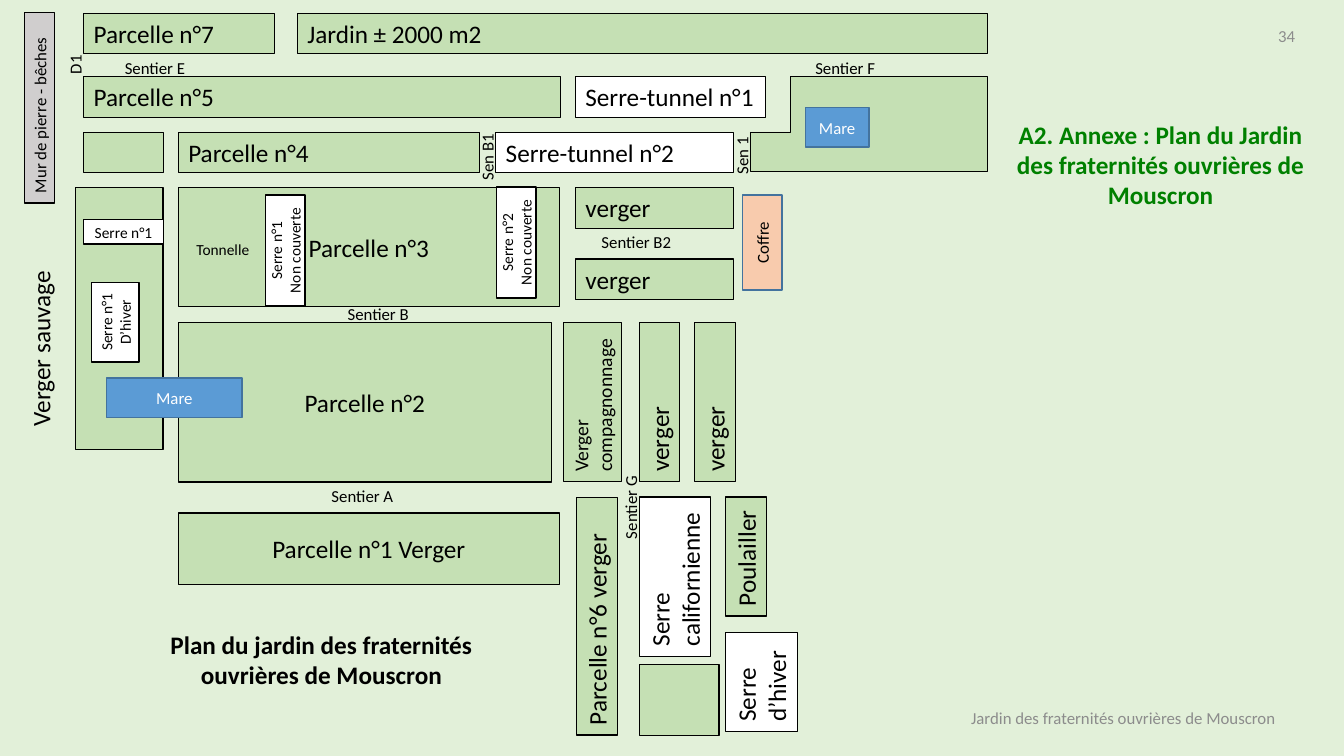
from dataclasses import dataclass

from pptx import Presentation
from pptx.dml.color import RGBColor
from pptx.enum.shapes import MSO_SHAPE as Preset
from pptx.enum.text import MSO_ANCHOR as Anchor, MSO_AUTO_SIZE as AutoSize, PP_ALIGN as Align
from pptx.util import Pt


@dataclass(frozen=True)
class Theme:
    font: str = "Calibri"
    ground: str = "E2F0D9"
    bed: str = "C5E0B4"
    glass: str = "FFFFFF"
    stone: str = "D0CECE"
    water: str = "5B9BD5"
    chest: str = "F8CBAD"
    edge: str = "43739E"
    ink: str = "000000"
    heading: str = "008000"
    muted: str = "8C8C8C"
    large: int = 18
    medium: int = 14
    small: int = 12
    tiny: int = 11


@dataclass(frozen=True)
class Box:
    left: float
    top: float
    width: float
    height: float

    def inner(self, x, y, width, height):
        """Return a box placed from this box's top left corner."""
        return Box(self.left + x, self.top + y, width, height)

    def turned(self):
        """Return the unrotated frame that fills this box after a quarter turn."""
        shift = (self.width - self.height) / 2
        return Box(self.left + shift, self.top - shift, self.height, self.width)

    def points(self):
        return [Pt(v) for v in (self.left, self.top, self.width, self.height)]


THEME = Theme()
ROW = 29
PATH = 21.6
POND = 28.1
TALL = 113.8


def rgb(value):
    return RGBColor.from_string(value)


def write(frame, text, *, size=THEME.large, color=THEME.ink, bold=False,
          align=Align.LEFT, anchor=Anchor.TOP, wrap=True):
    frame.word_wrap = wrap
    frame.auto_size = AutoSize.NONE
    frame.vertical_anchor = anchor
    for index, line in enumerate(text.split("\n")):
        para = frame.add_paragraph() if index else frame.paragraphs[0]
        para.alignment = align
        span = para.add_run()
        span.text = line
        span.font.name = THEME.font
        span.font.size = Pt(size)
        span.font.bold = bold
        span.font.color.rgb = rgb(color)


def paint(shape, fill, line, weight):
    shape.shadow.inherit = False
    shape.fill.solid()
    shape.fill.fore_color.rgb = rgb(fill)
    shape.line.color.rgb = rgb(line)
    shape.line.width = Pt(weight)


def plot(page, box, text="", *, fill=THEME.bed, line=THEME.ink, weight=0.75,
         upright=False, centred=False, **style):
    """Draw a filled rectangle; upright text reads from bottom to top."""
    frame = box.turned() if upright else box
    shape = page.shapes.add_shape(Preset.RECTANGLE, *frame.points())
    shape.rotation = 270 if upright else 0
    paint(shape, fill, line, weight)
    if centred:
        style.update(align=Align.CENTER, anchor=Anchor.MIDDLE)
    if text:
        write(shape.text_frame, text, **style)


def label(page, box, text, *, upright=False, size=THEME.small, **style):
    frame = box.turned() if upright else box
    shape = page.shapes.add_textbox(*frame.points())
    shape.rotation = 270 if upright else 0
    write(shape.text_frame, text, size=size, **style)


def pond(page, box):
    plot(page, box, "Mare", fill=THEME.water, line=THEME.edge, weight=1,
         centred=True, size=THEME.small, color=THEME.glass)


def pond_garden(page, box):
    """Draw the stepped bed with its pond."""
    right, bottom = box.left + box.width, box.top + box.height
    step_x, step_y = box.left + 28.8, box.top + 39.6
    corners = [(right, box.top), (right, bottom), (box.left, bottom),
               (box.left, step_y), (step_x, step_y)]
    builder = page.shapes.build_freeform(Pt(step_x), Pt(box.top), scale=1.0)
    builder.add_line_segments([(Pt(x), Pt(y)) for x, y in corners], close=True)
    paint(builder.convert_to_shape(), THEME.bed, THEME.ink, 0.5)
    pond(page, box.inner(39.6, 22.3, 45.4, POND))


def north_beds(page, box):
    rows = (0, 45.3, 84.9)
    for row, x, width, text, fill in (
        (0, 0, 136, "Parcelle n°7", THEME.bed),
        (0, 152.6, 493.2, "Jardin ± 2000 m2", THEME.bed),
        (1, 0, 340.6, "Parcelle n°5", THEME.bed),
        (1, 351.3, 136, "Serre-tunnel n°1", THEME.glass),
        (2, 0, 56.9, "", THEME.bed),
        (2, 67.6, 215.3, "Parcelle n°4", THEME.bed),
        (2, 294.4, 169.9, "Serre-tunnel n°2", THEME.glass),
    ):
        plot(page, box.inner(x, rows[row], width, ROW), text, fill=fill)
    for x, text in ((22.3, "Sentier E"), (515.5, "Sentier F")):
        label(page, box.inner(x, 28, 58, PATH), text, wrap=False)
    for x, y, length, text in ((-17, 22.6, 28.1, "D1"), (277.2, 79.2, 47.5, "Sen B1"),
                               (459.3, 73.4, 49, "Sen 1")):
        label(page, box.inner(x, y, PATH, length), text, upright=True, wrap=False)
    pond_garden(page, box.inner(475.9, rows[1], 169.9, 67.7))


def central_beds(page, box):
    for y, width, height, text in ((0, 272.2, 85, "Parcelle n°3"),
                                   (96.5, 266.4, TALL, "Parcelle n°2"),
                                   (232.6, 272.2, 51.1, "Parcelle n°1 Verger")):
        plot(page, box.inner(0, y, width, height), text, weight=1, centred=True)
    for x, y, number in ((62.3, 5.4, 1), (227.2, -0.3, 2)):
        plot(page, box.inner(x, y, 28.3, 79.2), f"Serre n°{number}\nNon couverte",
             fill=THEME.glass, weight=1, upright=True, centred=True, size=THEME.tiny)
    label(page, box.inner(5.8, 33.9, 53.3, 20.2), "Tonnelle", size=THEME.tiny, wrap=False)
    for x, y, text in ((113.8, 79.2, "Sentier B"), (102.3, 209.5, "Sentier A")):
        label(page, box.inner(x, y, 59, PATH), text, wrap=False)


def west_border(page, box):
    plot(page, box.inner(3.2, 0, PATH, 136), "Mur de pierre - bêches",
         fill=THEME.stone, upright=True, size=THEME.small)
    label(page, box.inner(0, 176, ROW, 126.7), "Verger sauvage", upright=True,
          size=THEME.large, wrap=False)
    plot(page, box.inner(39.6, 124.9, 62.6, 187.2), weight=1)
    pond(page, box.inner(61.9, 261, 96.5, POND))
    greenhouse = dict(fill=THEME.glass, weight=1, centred=True, size=THEME.tiny)
    plot(page, box.inner(45.4, 148, 56.9, 17.3), "Serre n°1", **greenhouse)
    plot(page, box.inner(51.1, 192.6, 33.8, 56.9), "Serre n°1\nD’hiver",
         upright=True, **greenhouse)


def orchards(page, box):
    for y in (0, 51.1):
        plot(page, box.inner(8.3, y, 113, ROW), "verger")
    label(page, box.inner(19.8, 28.1, 64.8, PATH), "Sentier B2", wrap=False)
    plot(page, box.inner(127.5, 5.4, 28.3, 67.7), "Coffre", fill=THEME.chest,
         line=THEME.edge, weight=1, upright=True, centred=True, size=THEME.small)
    plot(page, box.inner(0, 96.3, 41, TALL), "Verger\ncompagnonnage",
         upright=True, size=THEME.medium)
    for x in (53.7, 93.3):
        plot(page, box.inner(x, 96.3, ROW, TALL), "verger", upright=True)


def south_beds(page, box):
    for x, y, width, height, text, fill in (
        (0, 0, ROW, 170, "Parcelle n°6 verger", THEME.bed),
        (45, 0, 51, TALL, "Serre\ncalifornienne", THEME.glass),
        (106.6, 0, ROW, 85, "Poulailler", THEME.bed),
        (106.6, 96.4, 51, 71.3, "Serre d’hiver", THEME.glass),
    ):
        plot(page, box.inner(x, y, width, height), text, fill=fill, upright=True)
    plot(page, box.inner(45, 119.5, 56.9, 51.1), weight=1)
    label(page, box.inner(27.8, -22.7, PATH, 59.8), "Sentier G", upright=True, wrap=False)


def captions(page, box):
    title = page.shapes.title
    title.left, title.top, title.width, title.height = box.inner(712, 81.4, 234, 75).points()
    write(title.text_frame, "A2. Annexe : Plan du Jardin des fraternités ouvrières de Mouscron",
          color=THEME.heading, bold=True, align=Align.CENTER)
    label(page, box.inner(87.8, 445.7, 283.7, 51), "Plan du jardin des fraternités ouvrières de Mouscron",
          size=THEME.large, bold=True, align=Align.CENTER)
    footer = dict(color=THEME.muted, anchor=Anchor.MIDDLE)
    label(page, box.inner(881.3, 13.7, 51, 24.5), "34", align=Align.RIGHT, **footer)
    label(page, box.inner(672.5, 500.4, 260, 24.5), "Jardin des fraternités ouvrières de Mouscron",
          align=Align.CENTER, **footer)


def main():
    deck = Presentation()
    deck.slide_width, deck.slide_height = Pt(960), Pt(540)
    page = deck.slides.add_slide(deck.slide_layouts[5])
    page.background.fill.solid()
    page.background.fill.fore_color.rgb = rgb(THEME.ground)
    captions(page, Box(0, 0, 960, 540))
    north_beds(page, Box(59.8, 9.4, 645.8, 114))
    central_beds(page, Box(127.4, 133.9, 272.2, 283.7))
    west_border(page, Box(14.4, 9, 158.4, 312))
    orchards(page, Box(402.8, 133.9, 155.8, 210))
    south_beds(page, Box(411.8, 355, 157.6, 170.6))
    deck.save("out.pptx")


if __name__ == "__main__":
    main()
